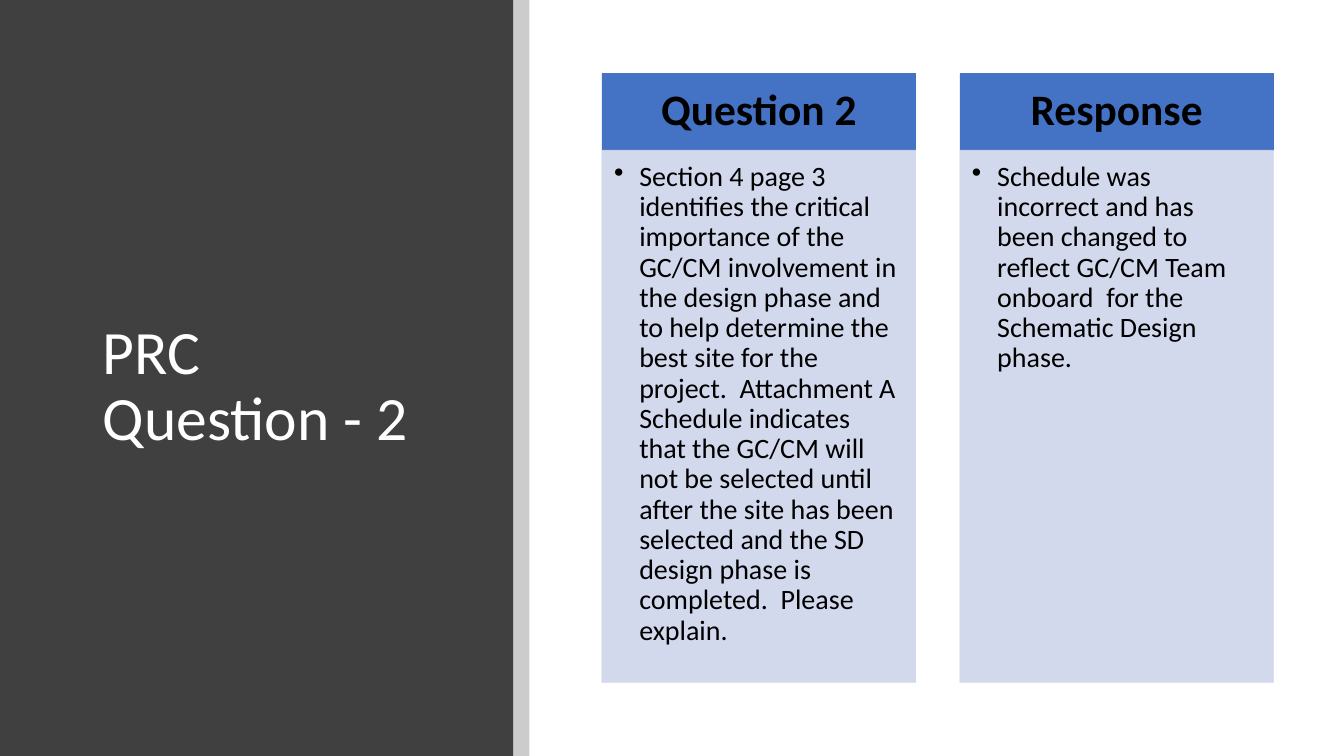
from dataclasses import dataclass

from lxml import etree
from pptx import Presentation
from pptx.dml.color import RGBColor
from pptx.enum.shapes import MSO_SHAPE
from pptx.enum.text import MSO_ANCHOR, PP_ALIGN
from pptx.oxml.ns import qn
from pptx.util import Inches, Pt

RECT = MSO_SHAPE.RECTANGLE
TOP, MIDDLE = MSO_ANCHOR.TOP, MSO_ANCHOR.MIDDLE
LEFT, CENTER = PP_ALIGN.LEFT, PP_ALIGN.CENTER

TITLE = "PRC \vQuestion - 2"
COLUMNS = [
    ("Question 2",
     "Section 4 page 3 identifies the critical importance of the GC/CM "
     "involvement in the design phase and to help determine the best site for "
     "the project.  Attachment A Schedule indicates that the GC/CM will not be "
     "selected until after the site has been selected and the SD design phase "
     "is completed.  Please explain."),
    ("Response",
     "Schedule was incorrect and has been changed to reflect GC/CM Team "
     "onboard  for the Schematic Design phase."),
]


@dataclass(frozen=True)
class Theme:
    font: str = "Calibri"
    title_size: int = 44
    head_size: int = 31
    body_size: int = 20
    panel: str = "404040"
    header: str = "4472C4"
    body: str = "CFD5EA"
    dark: str = "000000"
    light: str = "FFFFFF"


THEME = Theme()
WIDTH, HEIGHT = 13.33, 7.5
PANEL_W, STRIP_W = 5.09, 0.16
COL_LEFT, COL_TOP, COL_W, COL_GAP = 5.97, 0.73, 3.11, 0.44
HEAD_H, BODY_H = 0.76, 5.28
INDENT = 0.25


def set_alpha(color_format, percent):
    clr = color_format._xFill.find(qn("a:srgbClr"))
    etree.SubElement(clr, qn("a:alpha")).set("val", str(percent * 1000))


def add_rect(slide, box, color, alpha=None, outlined=False):
    sp = slide.shapes.add_shape(RECT, *map(Inches, box))
    sp.shadow.inherit = False
    fills = [sp.fill]
    if outlined:
        sp.line.width = Pt(0.5)
        fills.append(sp.line.fill)
    else:
        sp.line.fill.background()
    for fill in fills:
        fill.solid()
        fill.fore_color.rgb = RGBColor.from_string(color)
        if alpha is not None:
            set_alpha(fill.fore_color, alpha)
    return sp


def add_bullet(p):
    pPr = p._p.get_or_add_pPr()
    pPr.set("marL", str(Inches(INDENT)))
    pPr.set("indent", str(-Inches(INDENT)))
    etree.SubElement(pPr, qn("a:buChar")).set("char", "•")


def write(sp, text, size, color=THEME.dark, bold=False, align=LEFT,
          anchor=MIDDLE, insets=(0.1, 0.05, 0.1, 0.05), bullet=False):
    tf = sp.text_frame
    tf.word_wrap = True
    tf.vertical_anchor = anchor
    (tf.margin_left, tf.margin_top,
     tf.margin_right, tf.margin_bottom) = map(Inches, insets)
    p = tf.paragraphs[0]
    p.text = text
    p.alignment = align
    p.line_spacing = 0.9
    if bullet:
        add_bullet(p)
    for r in p.runs:
        r.font.name = THEME.font
        r.font.size = Pt(size)
        r.font.bold = bold
        r.font.color.rgb = RGBColor.from_string(color)


def add_column(slide, left, heading, answer):
    head = add_rect(slide, (left, COL_TOP, COL_W, HEAD_H), THEME.header,
                    outlined=True)
    write(head, heading, THEME.head_size, bold=True, align=CENTER,
          insets=(0.24, 0.14, 0.24, 0.14))
    body = add_rect(slide, (left, COL_TOP + HEAD_H, COL_W, BODY_H), THEME.body,
                    alpha=90, outlined=True)
    write(body, answer, THEME.body_size, anchor=TOP,
          insets=(0.12, 0.12, 0.16, 0.17), bullet=True)


def main():
    prs = Presentation()
    prs.slide_width, prs.slide_height = Inches(WIDTH), Inches(HEIGHT)
    slide = prs.slides.add_slide(prs.slide_layouts[6])

    add_rect(slide, (0, 0, PANEL_W, HEIGHT), THEME.panel)
    title = slide.shapes.add_textbox(*map(Inches, (0.92, 0.89, 3.65, 5.91)))
    write(title, TITLE, THEME.title_size, color=THEME.light)
    add_rect(slide, (PANEL_W, 0, STRIP_W, HEIGHT), THEME.dark, alpha=20)

    for i, (heading, answer) in enumerate(COLUMNS):
        add_column(slide, COL_LEFT + i * (COL_W + COL_GAP), heading, answer)

    prs.save("out.pptx")


if __name__ == "__main__":
    main()
